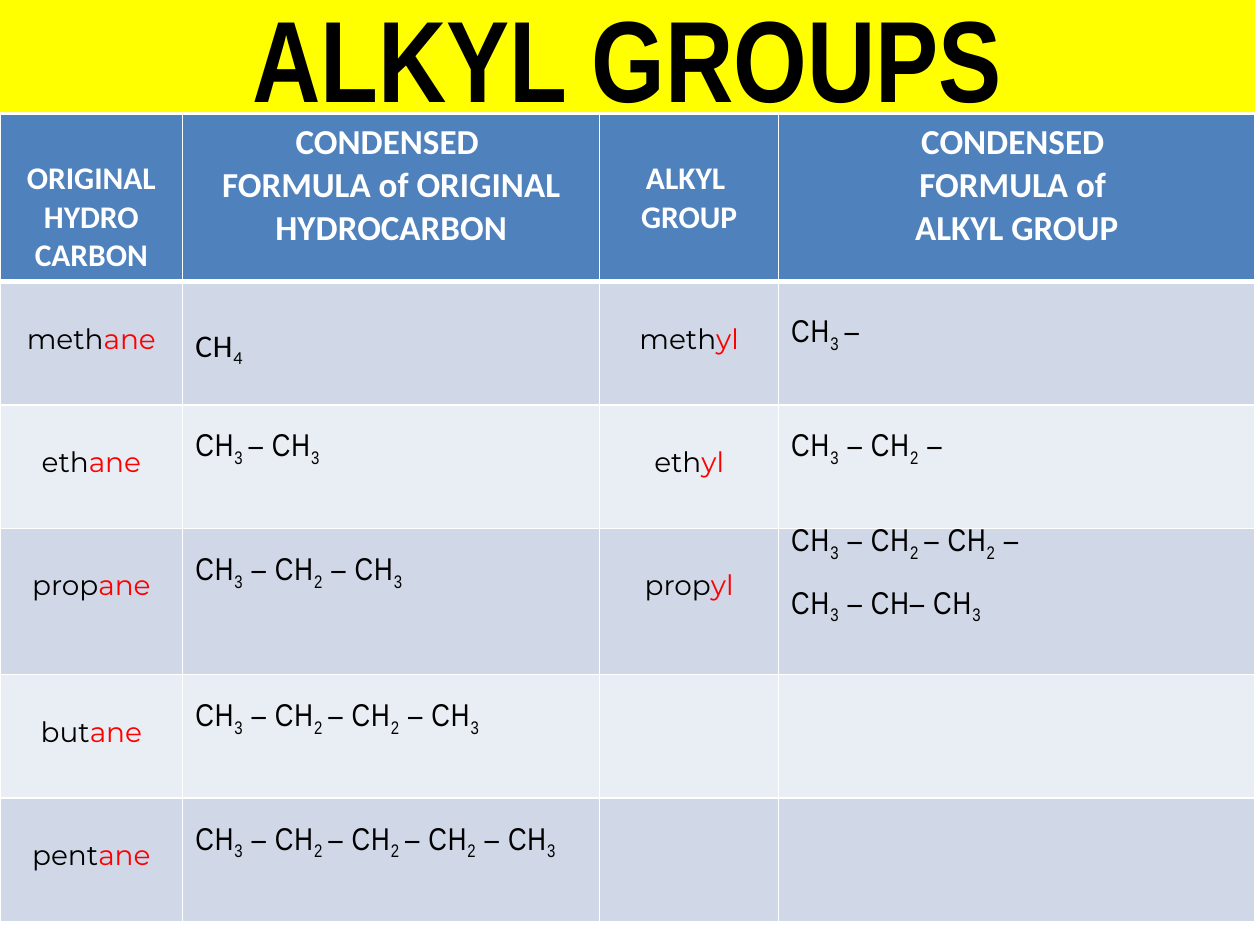
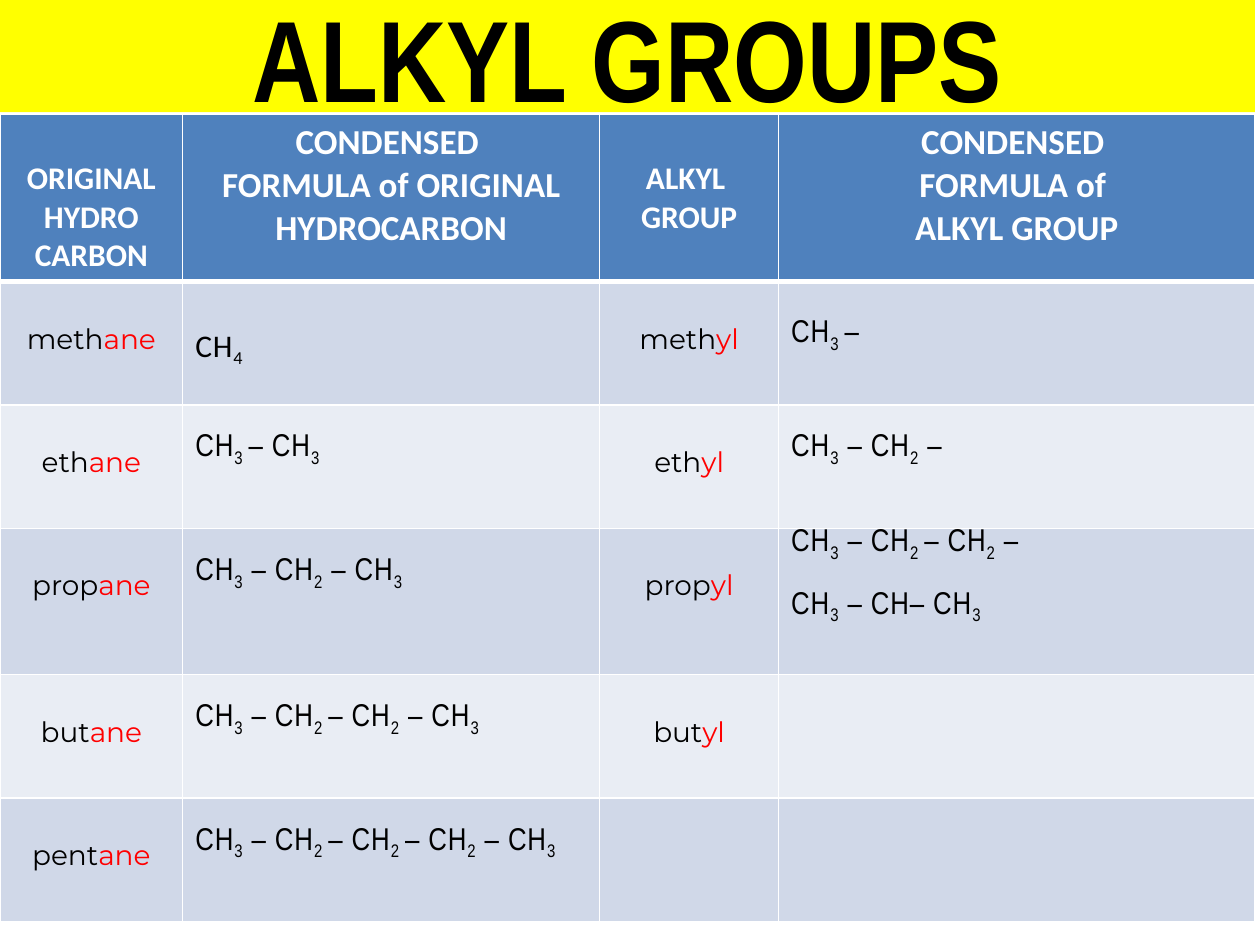
from pptx import Presentation
from pptx import oxml
from pptx.dml.color import RGBColor
from pptx.enum import text as t
from pptx.oxml import ns
from pptx.util import Inches, Pt

BLACK = RGBColor(0x00, 0x00, 0x00)
WHITE = RGBColor(0xFF, 0xFF, 0xFF)
RED = RGBColor(0xFF, 0x00, 0x00)
YELLOW = RGBColor(0xFF, 0xFF, 0x00)
HEADER_BLUE = RGBColor(0x4F, 0x81, 0xBD)
BANDS = (RGBColor(0xD0, 0xD8, 0xE8), RGBColor(0xE9, 0xED, 0xF4))

TITLE_BOX = (0, 0, 9.96, 0.89)
TABLE_BOX = (0, 0.91, 9.96, 6.4)
COLUMN_WIDTHS = (1.45, 3.31, 1.42, 3.78)
ROW_HEIGHTS = (1.32, 0.98, 0.98, 1.16, 0.98, 0.98)
NAME_TOP = 0.32
ISOMER_GAP = 16

HEADINGS = (
    (18, 0.36, ("ORIGINAL HYDRO", "CARBON")),
    (20, 0.05, ("CONDENSED ", "FORMULA of ORIGINAL HYDROCARBON")),
    (18, 0.36, ("ALKYL ", "GROUP")),
    (20, 0.05, ("CONDENSED ", "FORMULA of ", "ALKYL GROUP")),
)
STEMS = ("meth", "eth", "prop", "but", "pent")
ALKANES = (
    "CH_4",
    "CH_3 _– CH_3",
    "CH_3_ – CH_2_ – CH_3",
    "CH_3_ – CH_2 _– CH_2_ – CH_3",
    "CH_3_ – CH_2 _– CH_2 _– CH_2_ – CH_3",
)
ALKYLS = (
    ("CH_3 _–",),
    ("CH_3_ – CH_2_ –",),
    ("CH_3_ – CH_2 _– CH_2_ –", "CH_3_ – CH– CH_3"),
)


def set_font(font, name, size, color, bold=False):
    """Set the face, size, colour and weight of a font."""
    font.name, font.size, font.bold = name, Pt(size), bold
    font.color.rgb = color


def add_title(page, box):
    """Turn the title placeholder into the yellow band."""
    title = page.shapes.title
    title.left, title.top, title.width, title.height = map(Inches, box)
    title.fill.solid()
    title.fill.fore_color.rgb = YELLOW
    frame = title.text_frame
    frame.word_wrap = True
    frame.auto_size = t.MSO_AUTO_SIZE.NONE
    frame.vertical_anchor = t.MSO_ANCHOR.MIDDLE
    frame.text = "ALKYL GROUPS"
    para = frame.paragraphs[0]
    para.alignment = t.PP_ALIGN.CENTER
    set_font(para.font, "Arial Narrow", 66, BLACK, True)


def style_cell(cell, color, top_width, bottom_width):
    """Give a cell its white borders and its fill."""
    properties = cell._tc.get_or_add_tcPr()
    sides = {"lnL": 1, "lnR": 1, "lnT": top_width, "lnB": bottom_width}
    for side, width in sides.items():
        properties.append(oxml.parse_xml(
            f'<a:{side} {ns.nsdecls("a")} w="{Pt(width)}"><a:solidFill>'
            f'<a:srgbClr val="{WHITE}"/></a:solidFill></a:{side}>'))
    cell.fill.solid()
    cell.fill.fore_color.rgb = color


def add_lines(cell, count, top):
    """Return the given number of paragraphs, starting below a top margin."""
    cell.margin_top = Inches(top)
    frame = cell.text_frame
    for _ in range(count - 1):
        frame.add_paragraph()
    return frame.paragraphs


def write_heading(cell, size, top, lines):
    """Write a centred white heading."""
    for para, line in zip(add_lines(cell, len(lines), top), lines):
        para.text = line
        para.alignment = t.PP_ALIGN.CENTER
        set_font(para.font, "Calibri", size, WHITE, True)


def write_name(cell, stem, ending):
    """Write a compound name with its ending in red."""
    para = add_lines(cell, 1, NAME_TOP)[0]
    para.alignment = t.PP_ALIGN.CENTER
    set_font(para.font, "Montserrat", 16, BLACK)
    para.add_run().text = stem
    suffix = para.add_run()
    suffix.text = ending
    suffix.font.color.rgb = RED


def write_formulas(cell, formulas, top, face="Arial Narrow"):
    """Write formulas in which underscores enclose the subscripts."""
    for index, para in enumerate(add_lines(cell, len(formulas), top)):
        if index:
            para.space_before = Pt(ISOMER_GAP)
        set_font(para.font, face, 18, BLACK)
        for position, part in enumerate(formulas[index].split("_")):
            span = para.add_run()
            span.text = part
            properties = span._r.get_or_add_rPr()
            properties.set("spc", "50")
            if position % 2:
                properties.set("baseline", "-25000")


def add_alkyl_table(page, box, alkyl_count):
    """Add the table with the first few alkyl groups named."""
    table = page.shapes.add_table(
        len(ROW_HEIGHTS), len(COLUMN_WIDTHS), *map(Inches, box)).table
    table.horz_banding = False
    for column, width in zip(table.columns, COLUMN_WIDTHS):
        column.width = Inches(width)
    for index, (row, height) in enumerate(zip(table.rows, ROW_HEIGHTS)):
        row.height = Inches(height)
        color = BANDS[(index - 1) % 2] if index else HEADER_BLUE
        for cell in row.cells:
            style_cell(cell, color, 3 if index == 1 else 1, 1 if index else 3)
    for column, heading in enumerate(HEADINGS):
        write_heading(table.cell(0, column), *heading)
    for row, (stem, alkane) in enumerate(zip(STEMS, ALKANES), 1):
        write_name(table.cell(row, 0), stem, "ane")
        first = row == 1
        write_formulas(table.cell(row, 1), (alkane,), 0.36 if first else 0.23,
                       "Calibri" if first else "Arial Narrow")
    for row, stem in enumerate(STEMS[:alkyl_count], 1):
        write_name(table.cell(row, 2), stem, "yl")
    for row, (formulas, top) in enumerate(zip(ALKYLS, (0.3, 0.23, 0)), 1):
        write_formulas(table.cell(row, 3), formulas, top)


def main():
    """Build both slides and save the deck."""
    deck = Presentation()
    deck.slide_width, deck.slide_height = Inches(10), Inches(7.5)
    for alkyl_count in (3, 4):
        page = deck.slides.add_slide(deck.slide_layouts[5])
        add_title(page, TITLE_BOX)
        add_alkyl_table(page, TABLE_BOX, alkyl_count)
    deck.save("out.pptx")


if __name__ == "__main__":
    main()
